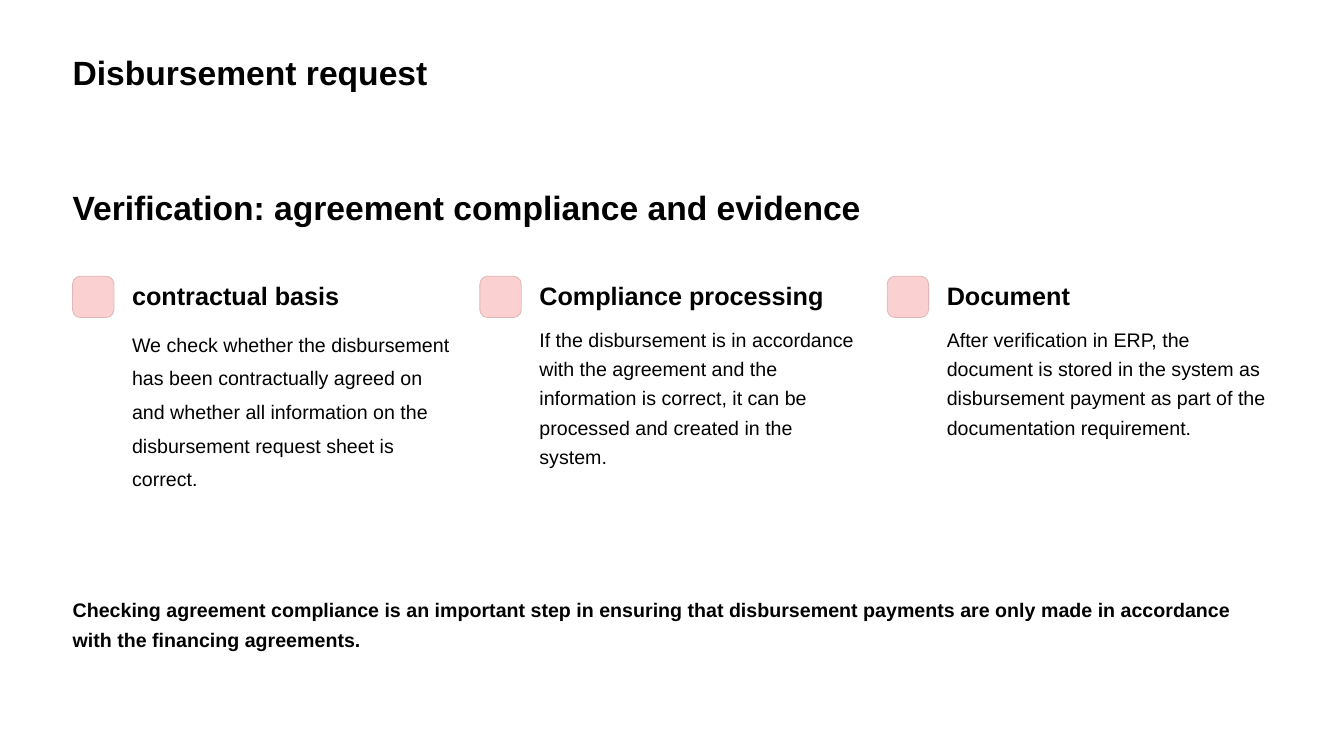
from dataclasses import dataclass

from pptx import Presentation
from pptx.dml.color import RGBColor
from pptx.enum import shapes, text
from pptx.util import Inches, Pt


@dataclass(frozen=True)
class Theme:
    font: str = "Arial"
    background: RGBColor = RGBColor(0xFF, 0xFF, 0xFF)
    ink: RGBColor = RGBColor(0x00, 0x00, 0x00)
    marker_fill: RGBColor = RGBColor(0xFB, 0xD0, 0xD0)
    marker_line: RGBColor = RGBColor(0xE1, 0xB6, 0xB6)
    heading_size: float = 24
    heading_spacing: float = 24.2
    step_size: float = 18
    step_spacing: float = 20
    body_size: float = 14
    body_spacing: float = 20.8
    loose_spacing: float = 24


THEME = Theme()
LEFT = 0.72
STEP_TOP = 2.74
STEP_PITCH = 4.04
STEP_INDENT = 0.59
MARKER_SIDE = 0.41
BODY_WIDTH = 3.22

STEPS = [
    ("contractual basis",
     "We check whether the disbursement has been contractually agreed on and "
     "whether all information on the disbursement request sheet is correct.",
     THEME.loose_spacing),
    ("Compliance processing",
     "If the disbursement is in accordance with the agreement and the "
     "information is correct, it can be processed and created in the system.",
     THEME.body_spacing),
    ("Document",
     "After verification in ERP, the document is stored in the system as "
     "disbursement payment as part of the documentation requirement.",
     THEME.body_spacing),
]


def write(frame, wording, size, spacing, bold=False, wrap=True):
    """Fill a text frame with one left-aligned paragraph and no insets."""
    frame.text = wording
    frame.margin_left = frame.margin_right = 0
    frame.margin_top = frame.margin_bottom = 0
    frame.auto_size = text.MSO_AUTO_SIZE.NONE
    frame.word_wrap = wrap
    frame.vertical_anchor = text.MSO_ANCHOR.TOP
    paragraph = frame.paragraphs[0]
    paragraph.alignment = text.PP_ALIGN.LEFT
    paragraph.line_spacing = Pt(spacing)
    paragraph.space_before = Pt(0)
    paragraph.font.name = THEME.font
    paragraph.font.size = Pt(size)
    paragraph.font.bold = bold
    paragraph.font.color.rgb = THEME.ink


def set_title(slide, wording):
    title = slide.shapes.title
    title.left, title.top = Inches(LEFT), Inches(0.58)
    title.width, title.height = Inches(11.73), Inches(0.91)
    write(title.text_frame, wording, THEME.heading_size,
          THEME.heading_spacing, bold=True, wrap=False)


def add_text(slide, box, *args, **style):
    label = slide.shapes.add_textbox(*map(Inches, box))
    write(label.text_frame, *args, **style)


def add_marker(slide, left):
    side = Inches(MARKER_SIDE)
    marker = slide.shapes.add_shape(shapes.MSO_SHAPE.ROUNDED_RECTANGLE,
                                    Inches(left), Inches(STEP_TOP), side, side)
    marker.adjustments[0] = 0.19
    marker.shadow.inherit = False
    marker.fill.solid()
    marker.fill.fore_color.rgb = THEME.marker_fill
    marker.line.color.rgb = THEME.marker_line
    marker.line.width = Pt(0.6)


def add_step(slide, left, heading, body, body_spacing):
    text_left = left + STEP_INDENT
    add_marker(slide, left)
    add_text(slide, (text_left, STEP_TOP + 0.06, BODY_WIDTH, 0.28), heading,
             THEME.step_size, THEME.step_spacing, bold=True, wrap=False)
    add_text(slide, (text_left, STEP_TOP + 0.46, BODY_WIDTH, 2.33), body,
             THEME.body_size, body_spacing)


def main():
    deck = Presentation()
    deck.slide_width, deck.slide_height = Inches(13.33), Inches(7.5)
    slide = deck.slides.add_slide(deck.slide_layouts.get_by_name("Title Only"))
    slide.background.fill.solid()
    slide.background.fill.fore_color.rgb = THEME.background

    set_title(slide, "Disbursement request")
    add_text(slide, (LEFT, 1.92, 8, 0.34),
             "Verification: agreement compliance and evidence",
             THEME.heading_size, THEME.heading_spacing, bold=True, wrap=False)
    for column, step in enumerate(STEPS):
        add_step(slide, LEFT + column * STEP_PITCH, *step)
    add_text(slide, (LEFT, 5.88, 11.89, 0.58),
             "Checking agreement compliance is an important step in ensuring "
             "that disbursement payments are only made in accordance with the "
             "financing agreements.",
             THEME.body_size, THEME.body_spacing, bold=True)
    deck.save("out.pptx")


if __name__ == "__main__":
    main()
